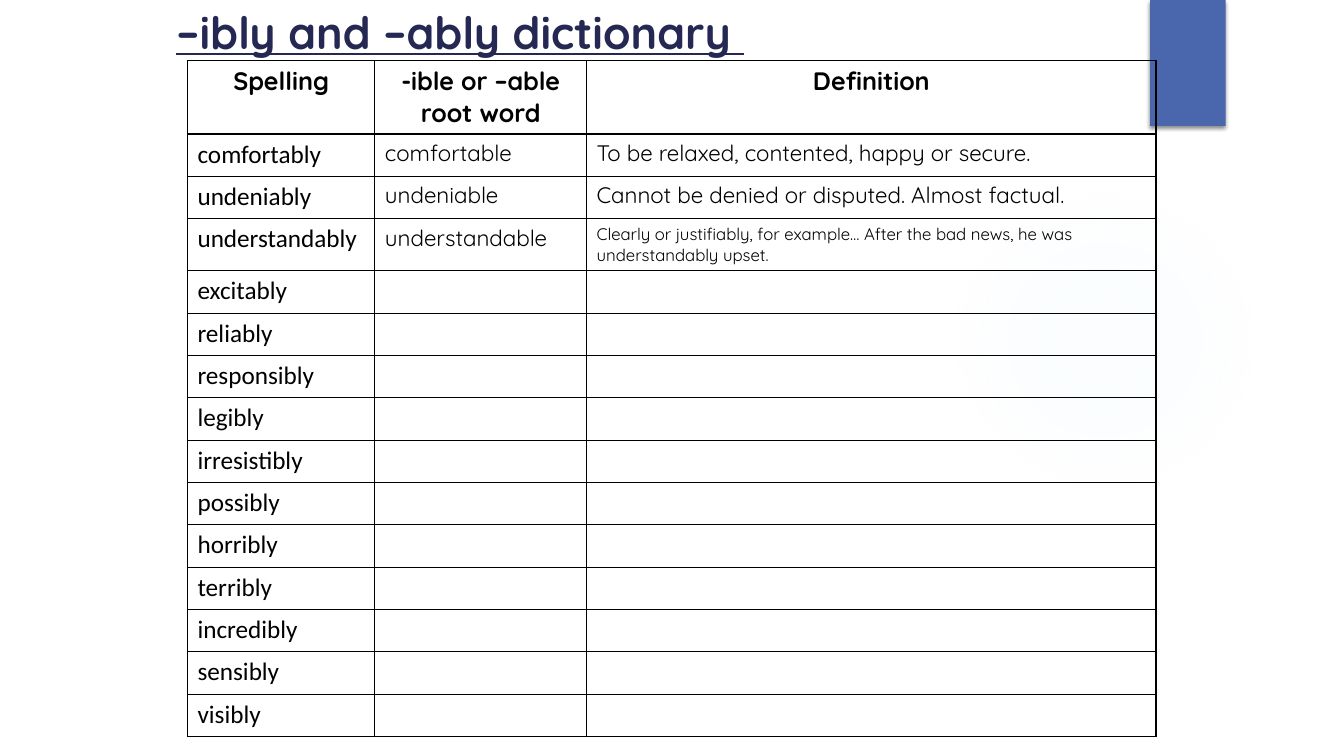
from lxml.etree import SubElement
from pptx import Presentation
from pptx.dml.color import RGBColor
from pptx.enum.shapes import MSO_SHAPE
from pptx.enum.text import MSO_ANCHOR, MSO_AUTO_SIZE, PP_ALIGN
from pptx.oxml import parse_xml
from pptx.oxml.ns import nsdecls, qn
from pptx.util import Pt

INK, NAVY, BLUE, PALE = "000000", "242852", "4A66AC", "CDE0FB"
HEADING = {"name": "Quicksand", "size": Pt(18), "bold": True}
WORD = {"name": "Calibri", "size": Pt(18), "bold": False}
ANSWER = {"name": "Quicksand", "size": Pt(16), "bold": False}
SMALL = ANSWER | {"size": Pt(12)}
TITLE = {"name": "Quicksand", "size": Pt(32), "bold": True, "underline": True}

HEADINGS = ["Spelling", "-ible or –able root word", "Definition"]
WORKED = [
    ("comfortably", "comfortable", "To be relaxed, contented, happy or secure."),
    ("undeniably", "undeniable", "Cannot be denied or disputed. Almost factual."),
    ("understandably", "understandable",
     "Clearly or justifiably, for example… After the bad news, he was understandably upset."),
]
TO_DO = ["excitably", "reliably", "responsibly", "legibly", "irresistibly", "possibly",
         "horribly", "terribly", "incredibly", "sensibly", "visibly"]


def colour(code):
    return RGBColor.from_string(code)


class DictionarySlide:
    """Holds the current slide and draws its elements in one style."""

    def __init__(self, deck):
        self.slide = deck.slides.add_slide(deck.slide_layouts[5])

    def put_text(self, frame, text, style, code=INK, align=PP_ALIGN.LEFT):
        paragraph = frame.paragraphs[0]
        paragraph.alignment = align
        font = paragraph.font
        if text:
            run = paragraph.add_run()
            run.text = text
            font = run.font
        for key, value in style.items():
            setattr(font, key, value)
        font.color.rgb = colour(code)

    def title(self, text, left, top, width, height):
        heading = self.slide.shapes.title
        place = {"left": left, "top": top, "width": width, "height": height}
        for key, value in place.items():
            setattr(heading, key, Pt(value))
        frame = heading.text_frame
        layout = {"word_wrap": True, "auto_size": MSO_AUTO_SIZE.NONE,
                  "vertical_anchor": MSO_ANCHOR.TOP}
        for key, value in layout.items():
            setattr(frame, key, value)
        self.put_text(frame, text, TITLE, NAVY)

    def block(self, kind, code, *place):
        block = self.slide.shapes.add_shape(kind, *map(Pt, place))
        block.shadow.inherit = False
        block.fill.solid()
        block.fill.fore_color.rgb = colour(code)
        block.line.fill.background()
        return block

    def glow(self, *place):
        glow = self.block(MSO_SHAPE.OVAL, PALE, *place)
        stops = "".join(
            f'<a:gs pos="{at * 1000}"><a:srgbClr val="{PALE}">'
            f'<a:alpha val="{alpha * 1000}"/></a:srgbClr></a:gs>'
            for at, alpha in [(0, 7), (36, 6), (69, 0), (100, 0)])
        gradient = parse_xml(
            f'<a:gradFill {nsdecls("a")}><a:gsLst>{stops}</a:gsLst><a:path path="circle">'
            '<a:fillToRect l="50000" t="50000" r="50000" b="50000"/></a:path></a:gradFill>')
        properties = glow._element.spPr
        properties.replace(properties.find(qn("a:solidFill")), gradient)

    def ribbon(self, *place):
        ribbon = self.block(MSO_SHAPE.RECTANGLE, BLUE, *place)
        effects = ribbon._element.spPr.find(qn("a:effectLst"))
        effects.append(parse_xml(
            f'<a:outerShdw {nsdecls("a")} blurRad="{Pt(3)}" dist="{Pt(2)}" dir="5400000" '
            f'rotWithShape="0"><a:srgbClr val="{INK}"><a:alpha val="45000"/>'
            '</a:srgbClr></a:outerShdw>'))

    def border(self, cell):
        properties = cell._tc.get_or_add_tcPr()
        for side in ("lnL", "lnR", "lnT", "lnB"):
            edge = SubElement(properties, qn(f"a:{side}"), w=str(Pt(1)))
            SubElement(SubElement(edge, qn("a:solidFill")), qn("a:srgbClr"), val=INK)

    def table(self, rows, left, top, widths, heights):
        frame = self.slide.shapes.add_table(
            len(rows), len(widths), Pt(left), Pt(top), Pt(sum(widths)), Pt(sum(heights)))
        grid = frame.table
        grid.first_row = grid.horz_banding = False
        for column, width in zip(grid.columns, widths):
            column.width = Pt(width)
        for row, height, entries in zip(grid.rows, heights, rows):
            row.height = Pt(height)
            for cell, (text, style, align) in zip(row.cells, entries):
                self.border(cell)
                cell.fill.background()
                self.put_text(cell.text_frame, text, style, align=align)


def dictionary_rows():
    rows = [[(text, HEADING, PP_ALIGN.CENTER) for text in HEADINGS]]
    for word, root, meaning in WORKED + [(word, "", "") for word in TO_DO]:
        styles = [WORD, ANSWER, SMALL if len(meaning) > 60 else ANSWER]
        rows.append([(text, style, PP_ALIGN.LEFT)
                     for text, style in zip((word, root, meaning), styles)])
    return rows


def main():
    deck = Presentation()
    deck.slide_width, deck.slide_height = Pt(960), Pt(540)
    page = DictionarySlide(deck)
    page.glow(677.5, 131.75, 221.75, 221.75)
    page.ribbon(821.5, 0, 54, 90)
    page.title("–ibly and –ably dictionary ", 118.8, 0, 721.5, 37.5)
    rows = dictionary_rows()
    page.table(rows, 133.9, 43.2, [133.9, 151.2, 406.8],
               [52.5] + [30.25] * (len(rows) - 1))
    deck.save("out.pptx")


if __name__ == "__main__":
    main()
